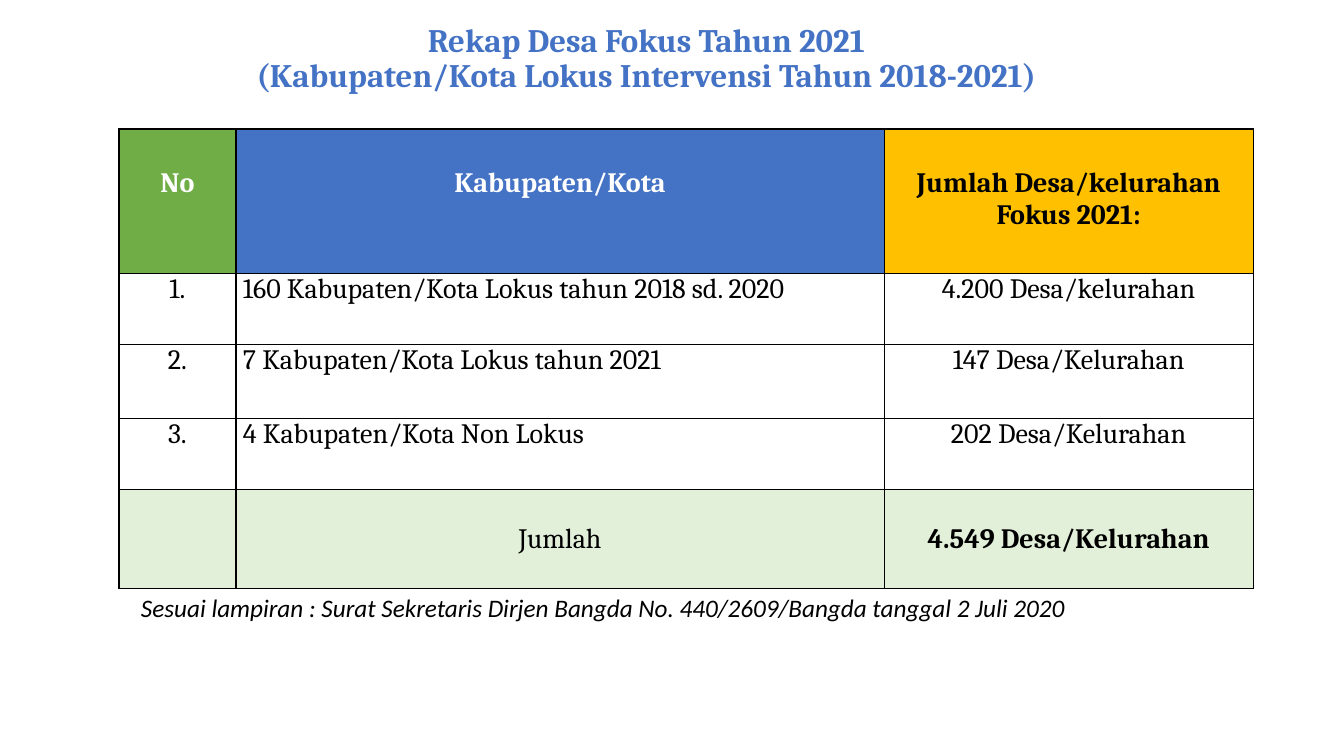
from lxml.etree import SubElement
from pptx import Presentation
from pptx.dml.color import RGBColor
from pptx.enum.text import MSO_ANCHOR, MSO_AUTO_SIZE, PP_ALIGN
from pptx.oxml.ns import qn
from pptx.util import Inches, Pt

BLUE = RGBColor(0x44, 0x72, 0xC4)
GREEN = RGBColor(0x70, 0xAD, 0x47)
GOLD = RGBColor(0xFF, 0xC0, 0x00)
PALE_GREEN = RGBColor(0xE2, 0xF0, 0xD9)
BLACK = RGBColor(0, 0, 0)
WHITE = RGBColor(0xFF, 0xFF, 0xFF)


def add_run(paragraph, text, font_name, size, color, bold=False, italic=False):
    run = paragraph.add_run()
    run.text = text
    run.font.name = font_name
    run.font.size = Pt(size)
    run.font.color.rgb = color
    run.font.bold = bold
    run.font.italic = italic


def add_borders(cell):
    """Draw a 1 pt black line on all four sides; call before filling the cell."""
    properties = cell._tc.get_or_add_tcPr()
    for side in ("a:lnL", "a:lnR", "a:lnT", "a:lnB"):
        line = SubElement(properties, qn(side), w=str(Pt(1)))
        fill = SubElement(line, qn("a:solidFill"))
        SubElement(fill, qn("a:srgbClr"), val=str(BLACK))


presentation = Presentation()
presentation.slide_width = Inches(13.33)
presentation.slide_height = Inches(7.5)
slide = presentation.slides.add_slide(presentation.slide_layouts[5])

# Title
title = slide.shapes.title
title.left, title.top = Inches(0.64), Inches(0.19)
title.width, title.height = Inches(11.54), Inches(0.89)
title_frame = title.text_frame
title_frame.word_wrap = True
title_frame.auto_size = MSO_AUTO_SIZE.NONE
title_frame.vertical_anchor = MSO_ANCHOR.TOP
title_lines = (
    "Rekap Desa Fokus Tahun 2021",
    "(Kabupaten/Kota Lokus Intervensi Tahun 2018-2021)",
)
for index, line_text in enumerate(title_lines):
    paragraph = title_frame.add_paragraph() if index else title_frame.paragraphs[0]
    paragraph.alignment = PP_ALIGN.CENTER
    paragraph.line_spacing = 0.9
    add_run(paragraph, line_text, "Cambria", 23.4, BLUE, bold=True)

# Table
rows = [
    ("No", "Kabupaten/Kota", "Jumlah Desa/kelurahan Fokus 2021:"),
    ("1.", "160 Kabupaten/Kota Lokus tahun 2018 sd. 2020", "4.200 Desa/kelurahan"),
    ("2.", "7 Kabupaten/Kota Lokus tahun 2021", "147 Desa/Kelurahan"),
    ("3.", "4 Kabupaten/Kota Non Lokus", "202 Desa/Kelurahan"),
    ("", "Jumlah", "4.549 Desa/Kelurahan"),
]
column_widths = (1.16, 6.43, 3.66)
row_heights = (1.43, 0.71, 0.73, 0.71, 0.98)
header_fills = (GREEN, BLUE, GOLD)
header_colors = (WHITE, WHITE, BLACK)
last_row = len(rows) - 1

table = slide.shapes.add_table(
    len(rows), len(column_widths),
    Inches(1.18), Inches(1.28), Inches(sum(column_widths)), Inches(sum(row_heights)),
).table
for column, width in zip(table.columns, column_widths):
    column.width = Inches(width)
for row, height in zip(table.rows, row_heights):
    row.height = Inches(height)

for row_index, row_texts in enumerate(rows):
    is_header = row_index == 0
    is_total = row_index == last_row
    for column_index, text in enumerate(row_texts):
        cell = table.cell(row_index, column_index)
        add_borders(cell)
        if is_header:
            cell.fill.solid()
            cell.fill.fore_color.rgb = header_fills[column_index]
        elif is_total:
            cell.fill.solid()
            cell.fill.fore_color.rgb = PALE_GREEN
        else:
            cell.fill.background()

        cell.margin_left = cell.margin_right = Inches(0.1 if is_header else 0.07)
        cell.margin_top = Inches(0.38 if is_header else 0.33 if is_total else 0)
        cell.margin_bottom = Inches(0)
        if not text:
            continue
        paragraph = cell.text_frame.paragraphs[0]
        is_name = column_index == 1 and not is_header and not is_total
        paragraph.alignment = PP_ALIGN.LEFT if is_name else PP_ALIGN.CENTER
        color = header_colors[column_index] if is_header else BLACK
        bold = is_header or (is_total and column_index == 2)
        add_run(paragraph, text, "Cambria", 20, color, bold=bold)

# Source note
note = slide.shapes.add_textbox(Inches(1.3), Inches(5.83), Inches(10.74), Inches(0.4))
note.text_frame.word_wrap = True
note.text_frame.auto_size = MSO_AUTO_SIZE.SHAPE_TO_FIT_TEXT
add_run(
    note.text_frame.paragraphs[0],
    "Sesuai lampiran : Surat Sekretaris Dirjen Bangda No. 440/2609/Bangda tanggal 2 Juli 2020",
    "Calibri", 18, BLACK, italic=True,
)

presentation.save("out.pptx")
